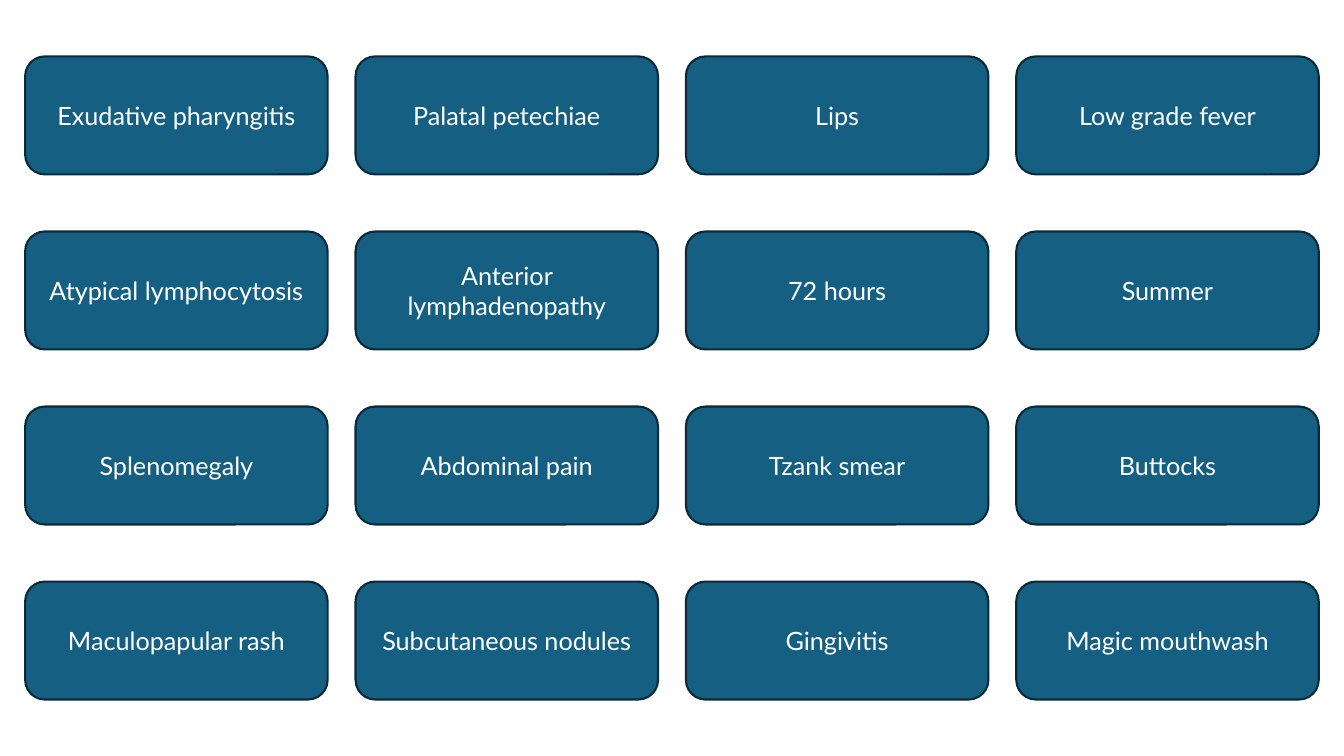
from dataclasses import dataclass

from pptx import Presentation
from pptx.dml.color import RGBColor as Rgb
from pptx.enum.shapes import MSO_SHAPE as Shape
from pptx.enum.text import MSO_ANCHOR as Anchor, PP_ALIGN as Align
from pptx.util import Inches, Pt

FINDINGS = [
    ("Exudative pharyngitis", "Palatal petechiae", "Lips", "Low grade fever"),
    ("Atypical lymphocytosis", "Anterior lymphadenopathy", "72 hours", "Summer"),
    ("Splenomegaly", "Abdominal pain", "Tzank smear", "Buttocks"),
    ("Maculopapular rash", "Subcutaneous nodules", "Gingivitis", "Magic mouthwash"),
]


@dataclass(frozen=True)
class Theme:
    card: Rgb = Rgb.from_string("156082")
    border: Rgb = Rgb.from_string("092A39")
    text: Rgb = Rgb.from_string("FFFFFF")
    border_width: int = Pt(1.5)
    font: str = "Lato"
    size: int = Pt(18)


THEME = Theme()
SLIDE_W, SLIDE_H = 13.33, 7.5
CARD_W, CARD_H = 3, 1.17
MARGIN_X, MARGIN_Y = 0.25, 0.56


def pitch(length, margin, card, count):
    return (length - 2 * margin - card) / (count - 1)


def add_card(slide, finding, left, top):
    card = slide.shapes.add_shape(
        Shape.ROUNDED_RECTANGLE,
        Inches(left), Inches(top), Inches(CARD_W), Inches(CARD_H),
    )
    card.shadow.inherit = False
    card.fill.solid()
    card.fill.fore_color.rgb = THEME.card
    card.line.color.rgb = THEME.border
    card.line.width = THEME.border_width
    label = card.text_frame
    label.text = finding
    label.word_wrap = True
    label.vertical_anchor = Anchor.MIDDLE
    paragraph = label.paragraphs[0]
    paragraph.alignment = Align.CENTER
    font = paragraph.runs[0].font
    for attribute, value in {"name": THEME.font, "size": THEME.size}.items():
        setattr(font, attribute, value)
    font.color.rgb = THEME.text


def main():
    deck = Presentation()
    deck.slide_width, deck.slide_height = Inches(SLIDE_W), Inches(SLIDE_H)
    slide = deck.slides.add_slide(deck.slide_layouts[6])
    step_x = pitch(SLIDE_W, MARGIN_X, CARD_W, len(FINDINGS[0]))
    step_y = pitch(SLIDE_H, MARGIN_Y, CARD_H, len(FINDINGS))
    for row, findings in enumerate(FINDINGS):
        for column, finding in enumerate(findings):
            add_card(slide, finding, MARGIN_X + column * step_x, MARGIN_Y + row * step_y)
    deck.save("out.pptx")


if __name__ == "__main__":
    main()
